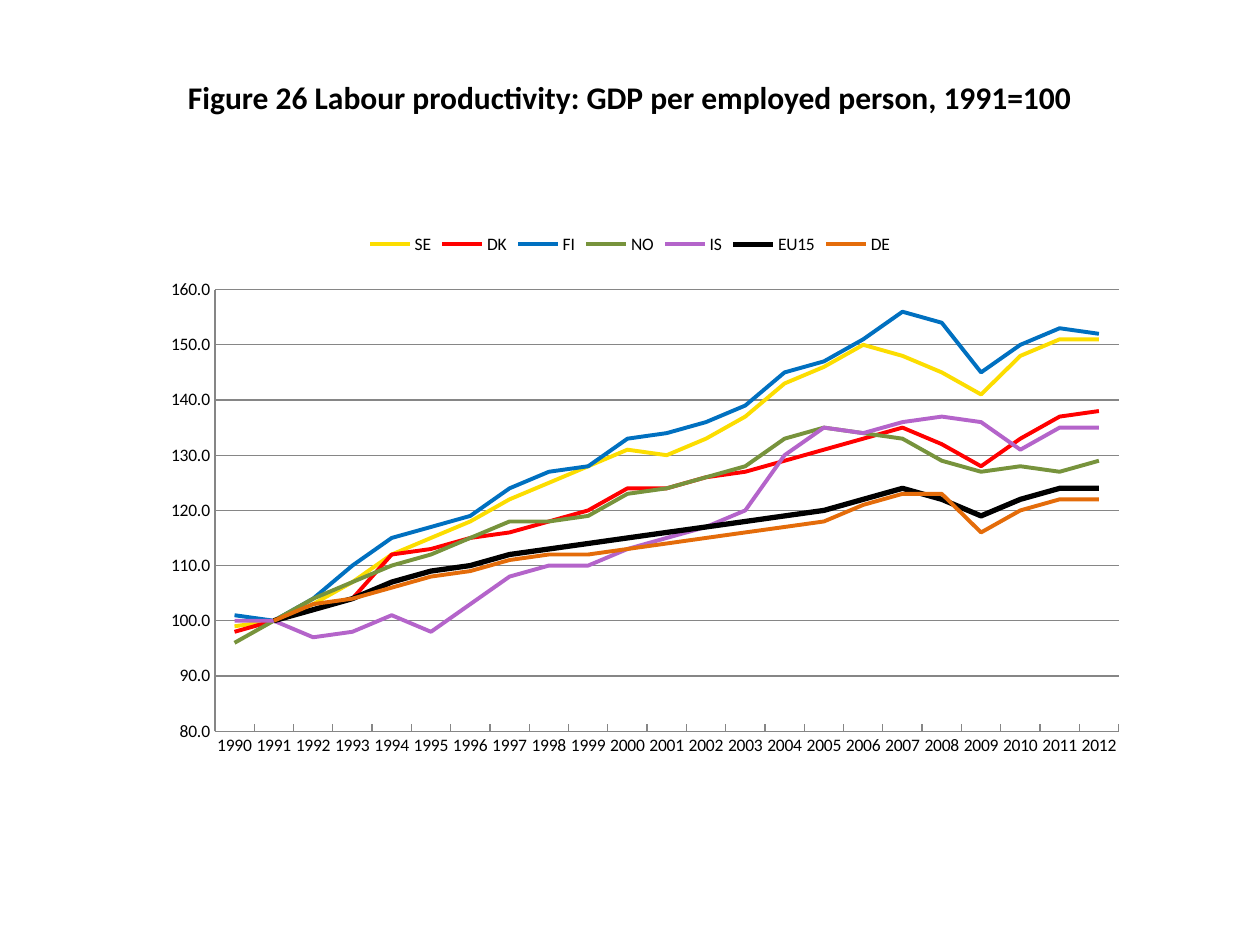
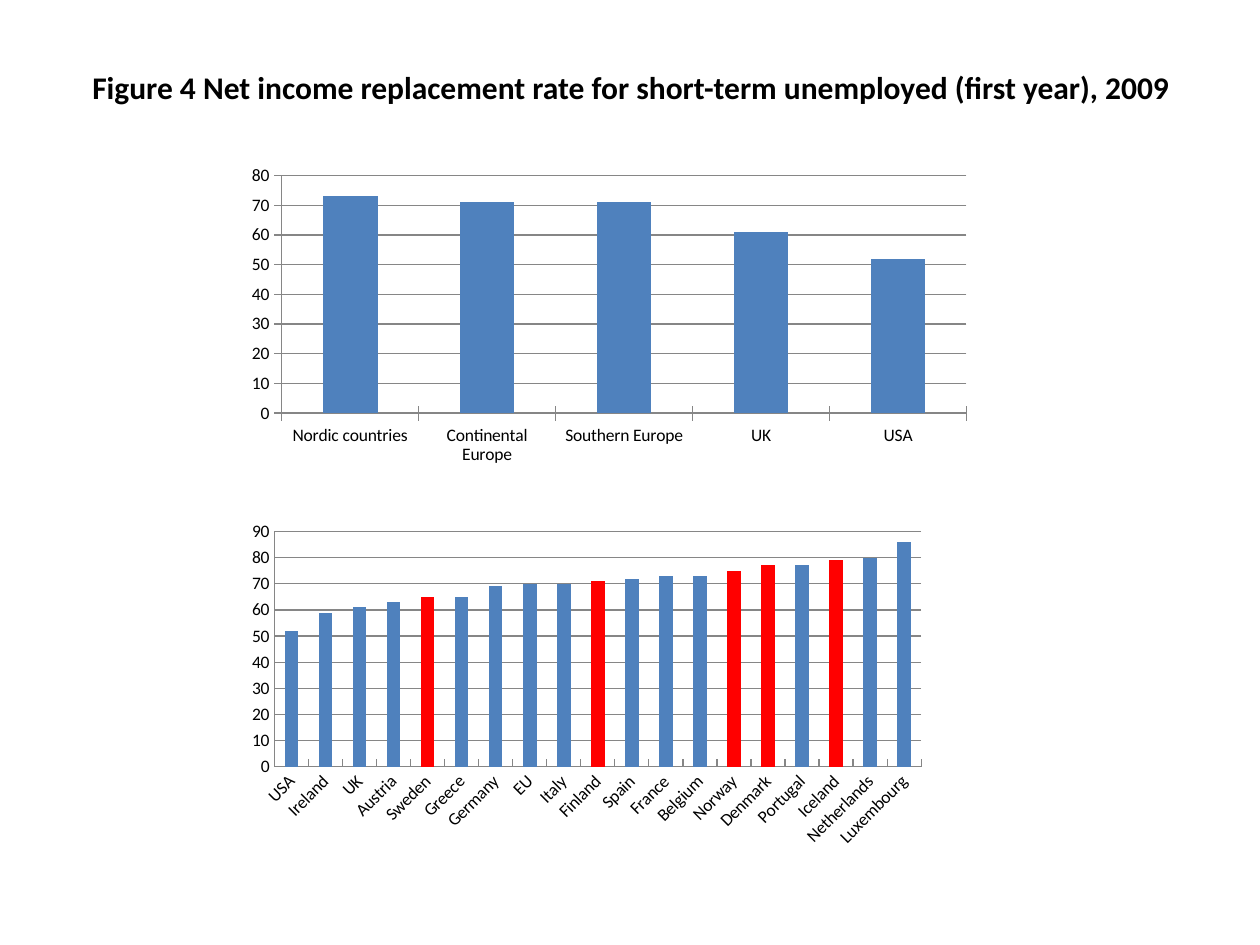
from lxml import etree
from pptx import Presentation
from pptx.chart.data import CategoryChartData
from pptx.dml.color import RGBColor
from pptx.enum.chart import XL_CHART_TYPE, XL_LEGEND_POSITION, XL_TICK_MARK
from pptx.enum.text import MSO_ANCHOR, MSO_AUTO_SIZE, PP_ALIGN
from pptx.oxml.ns import qn
from pptx.util import Pt

LINE, COLUMN = XL_CHART_TYPE.LINE, XL_CHART_TYPE.COLUMN_CLUSTERED
TOP = XL_LEGEND_POSITION.TOP
INSIDE, CROSS = XL_TICK_MARK.INSIDE, XL_TICK_MARK.CROSS
MIDDLE, BOTTOM = MSO_ANCHOR.MIDDLE, MSO_ANCHOR.BOTTOM
CENTER, NO_FIT = PP_ALIGN.CENTER, MSO_AUTO_SIZE.NONE

FONT = "Calibri"
BLACK = RGBColor(0x00, 0x00, 0x00)
GREY = RGBColor(0x86, 0x86, 0x86)
BLUE = RGBColor(0x4F, 0x81, 0xBD)
RED = RGBColor(0xFF, 0x00, 0x00)
YELLOW = RGBColor(0xFC, 0xDD, 0x00)
AZURE = RGBColor(0x00, 0x70, 0xC0)
GREEN = RGBColor(0x77, 0x93, 0x3C)
PURPLE = RGBColor(0xB4, 0x64, 0xCA)
ORANGE = RGBColor(0xE4, 0x6C, 0x0A)

YEARS = [str(year) for year in range(1990, 2013)]
OUTPUT = [
    ("SE", YELLOW, 2.25, [99, 100, 103, 107, 112, 115, 118, 122, 125, 128, 131, 130,
                          133, 137, 143, 146, 150, 148, 145, 141, 148, 151, 151]),
    ("DK", RED, 2.25, [98, 100, 102, 104, 112, 113, 115, 116, 118, 120, 124, 124,
                       126, 127, 129, 131, 133, 135, 132, 128, 133, 137, 138]),
    ("FI", AZURE, 2.25, [101, 100, 104, 110, 115, 117, 119, 124, 127, 128, 133, 134,
                         136, 139, 145, 147, 151, 156, 154, 145, 150, 153, 152]),
    ("NO", GREEN, 2.25, [96, 100, 104, 107, 110, 112, 115, 118, 118, 119, 123, 124,
                         126, 128, 133, 135, 134, 133, 129, 127, 128, 127, 129]),
    ("IS", PURPLE, 2.25, [100, 100, 97, 98, 101, 98, 103, 108, 110, 110, 113, 115,
                          117, 120, 130, 135, 134, 136, 137, 136, 131, 135, 135]),
    ("EU15", BLACK, 3, [None, 100, 102, 104, 107, 109, 110, 112, 113, 114, 115, 116,
                        117, 118, 119, 120, 122, 124, 122, 119, 122, 124, 124]),
    ("DE", ORANGE, 2.25, [None, 100, 103, 104, 106, 108, 109, 111, 112, 112, 113, 114,
                          115, 116, 117, 118, 121, 123, 123, 116, 120, 122, 122]),
]
REGIONS = {"Nordic countries": 73, "Continental Europe": 71, "Southern Europe": 71,
           "UK": 61, "USA": 52}
RATES = {"USA": 52, "Ireland": 59, "UK": 61, "Austria": 63, "Sweden": 65,
         "Greece": 65, "Germany": 69, "EU": 70, "Italy": 70, "Finland": 71,
         "Spain": 72, "France": 73, "Belgium": 73, "Norway": 75, "Denmark": 77,
         "Portugal": 77, "Iceland": 79, "Netherlands": 80, "Luxembourg": 86}
NORDIC = {"Sweden", "Finland", "Norway", "Denmark", "Iceland"}


class Deck:
    def __init__(self):
        self.prs = Presentation()
        self.prs.slide_width, self.prs.slide_height = Pt(720), Pt(540)
        self.slide = None

    def page(self, text, box, anchor=MIDDLE, below=3.6):
        """Add a slide with its title; below is the inset under the text."""
        self.slide = self.prs.slides.add_slide(self.prs.slide_layouts[5])
        title = self.slide.shapes.title
        title.left, title.top, title.width, title.height = map(Pt, box)
        frame = title.text_frame
        frame.text = text
        frame.word_wrap, frame.auto_size = True, NO_FIT
        frame.vertical_anchor, frame.margin_bottom = anchor, Pt(below)
        para = frame.paragraphs[0]
        para.alignment = CENTER
        self.style(para.runs[0].font, 18, True)

    def style(self, font, size, bold=False):
        font.name, font.size, font.bold = FONT, Pt(size), bold
        font.color.rgb = BLACK

    def chart(self, kind, box, plot, cats, series, scale, tick, form="0"):
        """Add a chart; plot is the inner area as shares of the chart."""
        data = CategoryChartData()
        data.categories = cats
        for name, vals in series:
            data.add_series(name, vals)
        chart = self.slide.shapes.add_chart(kind, *map(Pt, box), data).chart
        chart.has_title = chart.has_legend = False
        self.style(chart.font, 10)
        chart.plots[0].vary_by_categories = False
        axis = chart.value_axis
        axis.minimum_scale, axis.maximum_scale = scale
        axis.major_unit = 10
        axis.has_major_gridlines = True
        axis.tick_labels.number_format = form
        axis.tick_labels.number_format_is_linked = False
        for line in (axis.major_gridlines.format.line, axis.format.line,
                     chart.category_axis.format.line):
            line.color.rgb, line.width = GREY, Pt(0.75)
        axis.major_tick_mark = chart.category_axis.major_tick_mark = tick
        self.place(chart, plot)
        return chart

    def place(self, chart, plot):
        area = chart.plots[0]._element.getparent()
        for old in area.findall(qn("c:layout")):
            area.remove(old)
        layout = etree.Element(qn("c:layout"))
        area.insert(0, layout)
        manual = etree.SubElement(layout, qn("c:manualLayout"))
        rules = [("layoutTarget", "inner"), ("xMode", "edge"), ("yMode", "edge")]
        for tag, val in rules + list(zip("xywh", plot)):
            etree.SubElement(manual, qn("c:" + tag)).set("val", str(val))

    def lines(self, box, plot, cats, series, scale):
        pairs = [(name, vals) for name, _, _, vals in series]
        chart = self.chart(LINE, box, plot, cats, pairs, scale, INSIDE, "0.0")
        chart.has_legend = True
        chart.legend.position = TOP
        chart.legend.include_in_layout = False
        for item, (_, color, width, _) in zip(chart.series, series):
            item.smooth = False
            item.format.line.color.rgb = color
            item.format.line.width = Pt(width)

    def bars(self, box, plot, rates, top, tick, marked=(), slant=0):
        """Add columns; marked ones are red, slant turns the labels by degrees."""
        chart = self.chart(COLUMN, box, plot, list(rates),
                           [("Series 1", list(rates.values()))], (0, top), tick)
        chart.plots[0].gap_width = 150
        bars = chart.series[0]
        bars.format.fill.solid()
        bars.format.fill.fore_color.rgb = BLUE
        for spot, name in enumerate(rates):
            if name in marked:
                fill = bars.points[spot].format.fill
                fill.solid()
                fill.fore_color.rgb = RED
        if slant:
            axis = chart.category_axis
            self.style(axis.tick_labels.font, 10)
            body = axis._element.find(qn("c:txPr")).find(qn("a:bodyPr"))
            body.set("rot", str(slant * 60000))


def main():
    deck = Deck()
    deck.page("Figure 26 Labour productivity: GDP per employed person, 1991=100",
              (36, 21.6, 648, 67))
    deck.lines((36, 126, 648, 356.4), (0.134, 0.111, 0.797, 0.708),
               YEARS, OUTPUT, (80, 160))

    deck.page("Figure 4 Net income replacement rate for short-term unemployed "
              "(first year), 2009", (36.7, 20.9, 648, 45.4), BOTTOM, 6)
    deck.bars((115.9, 88.6, 459.4, 186.5), (0.098, 0.063, 0.852, 0.728),
              REGIONS, 80, CROSS)
    deck.bars((121.7, 292.3, 433.4, 203.8), (0.081, 0.056, 0.853, 0.66),
              RATES, 90, INSIDE, NORDIC, -45)
    deck.prs.save("out.pptx")


if __name__ == "__main__":
    main()
